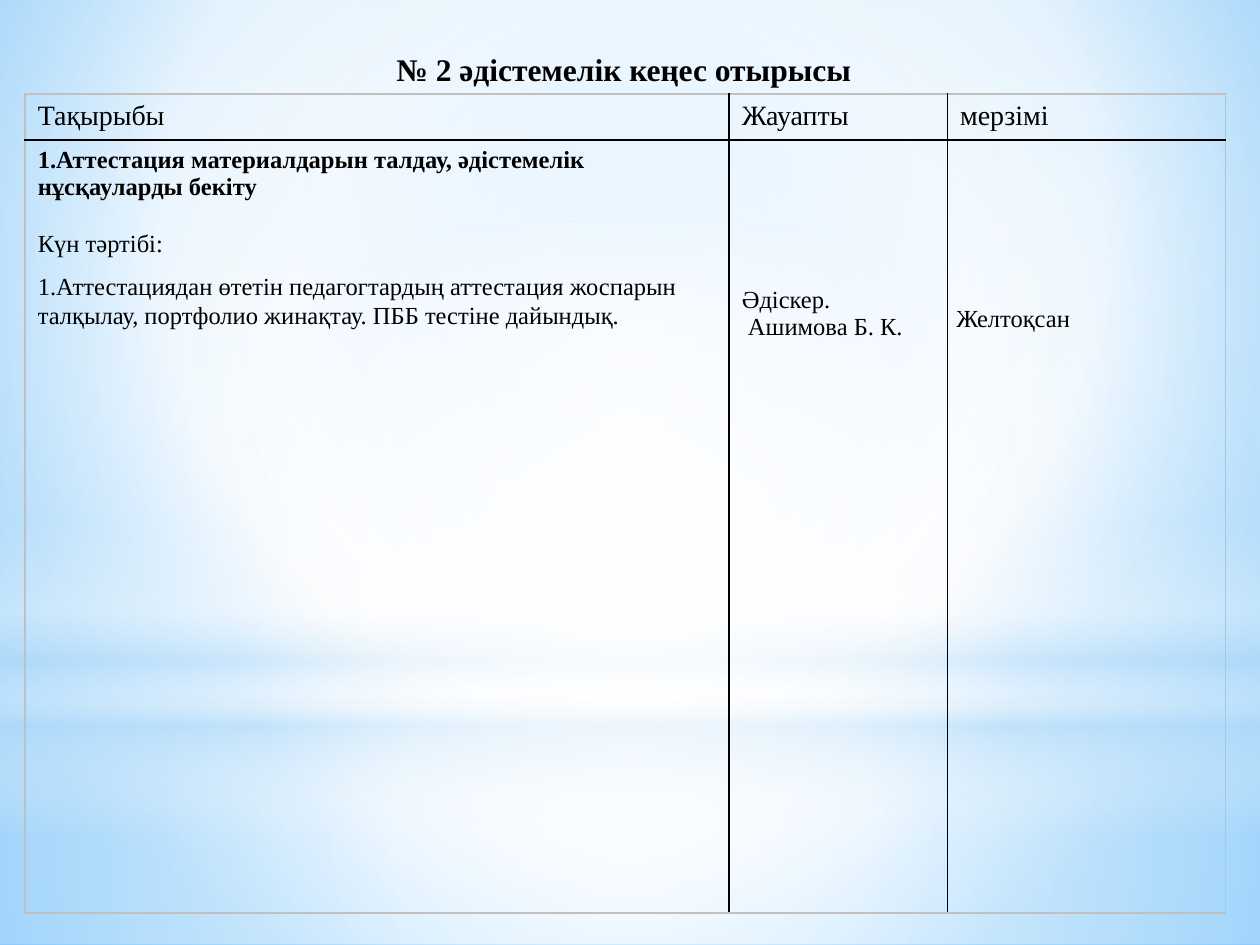
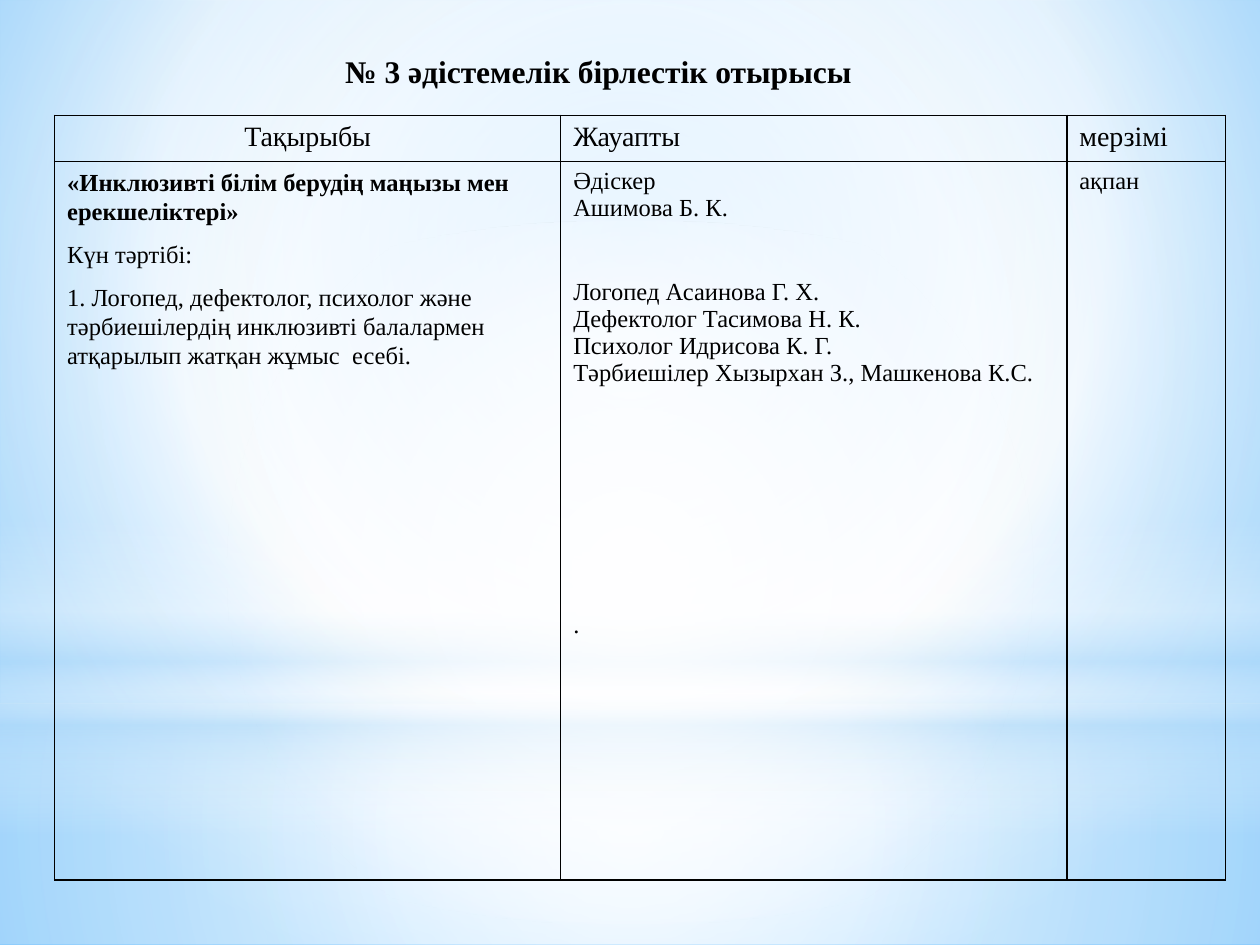
from lxml.etree import SubElement
from pptx import Presentation
from pptx.dml.color import RGBColor
from pptx.enum.shapes import MSO_SHAPE
from pptx.enum.text import MSO_ANCHOR, MSO_AUTO_SIZE, PP_ALIGN
from pptx.oxml.ns import qn
from pptx.util import Pt

COLORS = {
    "text": "000000",
    "grid": "000000",
    "pale_grid": "C0C0C0",
    "white": "FFFFFF",
    "mist": "B4DCFA",
    "sky": "9ED5FF",
    "azure": "5BB9FF",
}
FONT = "Times New Roman"
TITLE_SIZE, HEADER_SIZE, BODY_SIZE = 18, 16, 14
HEADER_HEIGHT = 26.3
BODY_LINE = 16.1
HEADERS = ["Тақырыбы", "Жауапты", "мерзімі"]
LOOSE = {"line_spacing": 1.07, "space_after": 8}
CENTER = (50, 50, 50, 50)

BACKDROP = [
    (MSO_SHAPE.RECTANGLE, (0, 402, 720, 138), CENTER,
     [(0, "white", 91), (37, "white", 76), (100, "mist", 79)]),
    (MSO_SHAPE.RECTANGLE, (0, 0, 720, 402), CENTER,
     [(0, "white", 89), (48, "white", 62), (100, "mist", 79)]),
    (MSO_SHAPE.RECTANGLE, (0, 297, 720, 180), None,
     [(0, "white", 0), (29, "white", 30), (45, "mist", 40),
      (55, "white", 26), (65, "mist", 60), (100, "white", 0)]),
    (MSO_SHAPE.OVAL, (0, 126, 720, 402), CENTER,
     [(0, "white", 100), (56, "white", 0)]),
]


def write_text(frame, text, size=BODY_SIZE, bold=False, align=PP_ALIGN.LEFT,
               line_spacing=1.0, space_before=0, space_after=0):
    paragraph = frame.paragraphs[0]
    if paragraph.runs:
        paragraph = frame.add_paragraph()
    paragraph.alignment = align
    paragraph.line_spacing = line_spacing
    paragraph.space_before = Pt(space_before)
    paragraph.space_after = Pt(space_after)
    run = paragraph.add_run()
    run.text = text
    run.font.name = FONT
    run.font.size = Pt(size)
    run.font.bold = bold
    run.font.color.rgb = RGBColor.from_string(COLORS["text"])


def set_gradient(fill, properties, stops, focus):
    fill.solid()
    solid = properties.find(qn("a:solidFill"))
    gradient = properties.makeelement(qn("a:gradFill"), {"rotWithShape": "1"})
    properties.replace(solid, gradient)
    stop_list = SubElement(gradient, qn("a:gsLst"))
    for position, color, opacity in stops:
        stop = SubElement(stop_list, qn("a:gs"), pos=str(position * 1000))
        value = SubElement(stop, qn("a:srgbClr"), val=COLORS[color])
        if opacity < 100:
            SubElement(value, qn("a:alpha"), val=str(opacity * 1000))
    if focus:
        circle = SubElement(gradient, qn("a:path"), path="circle")
        edges = {side: str(share * 1000) for side, share in zip("ltrb", focus)}
        SubElement(circle, qn("a:fillToRect"), edges)
    else:
        SubElement(gradient, qn("a:lin"), ang="5400000", scaled="0")


def build_backdrop(master, slide):
    fill = master.background.fill
    fill.solid()
    properties = master.element.find(".//" + qn("p:bgPr"))
    set_gradient(fill, properties,
                 [(0, "sky", 100), (60, "white", 100), (100, "azure", 100)],
                 (20, 10, 20, 60))
    for index, (kind, bounds, focus, stops) in enumerate(BACKDROP):
        shape = slide.shapes.add_shape(kind, *map(Pt, bounds))
        shape.shadow.inherit = False
        shape.line.fill.background()
        set_gradient(shape.fill, shape.element.spPr, stops, focus)
        shape.element.nvSpPr.cNvPr.set("id", str(20 + index))
        master.shapes.element.insert(2 + index, shape.element)


def add_title(slide, text, bounds, align):
    title = slide.shapes.title
    title.left, title.top, title.width, title.height = map(Pt, bounds)
    frame = title.text_frame
    frame.auto_size = MSO_AUTO_SIZE.NONE
    frame.word_wrap = True
    frame.vertical_anchor = MSO_ANCHOR.BOTTOM
    write_text(frame, text, size=TITLE_SIZE, bold=True, align=align)


def set_borders(cell, colors):
    properties = cell._tc.get_or_add_tcPr()
    for side, color in zip("LRTB", colors):
        line = SubElement(properties, qn("a:ln" + side), w=str(Pt(1)))
        solid = SubElement(line, qn("a:solidFill"))
        SubElement(solid, qn("a:srgbClr"), val=COLORS[color])


def add_table(slide, left, top, widths, body_height, cells, frame_color="grid"):
    heights = [HEADER_HEIGHT, body_height]
    bounds = (left, top, sum(widths), sum(heights))
    table = slide.shapes.add_table(2, len(widths), *map(Pt, bounds)).table
    table.first_row = table.horz_banding = False
    for column, width in zip(table.columns, widths):
        column.width = Pt(width)
    last_column = len(widths) - 1
    for row, height in enumerate(heights):
        table.rows[row].height = Pt(height)
        for column in range(len(widths)):
            cell = table.cell(row, column)
            on_edge = [column == 0, column == last_column, row == 0, row == 1]
            set_borders(cell, [frame_color if edge else "grid" for edge in on_edge])
            cell.fill.background()
            for text, text_format in cells[row][column]:
                write_text(cell.text_frame, text, **text_format)
    return table


def header_row(first_align=PP_ALIGN.LEFT):
    aligns = [first_align, PP_ALIGN.LEFT, PP_ALIGN.LEFT]
    return [[(text, {"size": HEADER_SIZE, "align": align})]
            for text, align in zip(HEADERS, aligns)]


def build_council_meeting(slide):
    add_title(slide, "№ 2 әдістемелік кеңес отырысы", (198, 3, 317, 51), PP_ALIGN.CENTER)
    topics = [
        ("1.Аттестация материалдарын талдау, әдістемелік  нұсқауларды бекіту", {"bold": True}),
        ("Күн тәртібі:", {**LOOSE, "space_before": BODY_LINE}),
        ("1.Аттестациядан өтетін педагогтардың аттестация жоспарын талқылау, "
         "портфолио жинақтау. ПББ тестіне дайындық.", LOOSE),
    ]
    people = [("Әдіскер.", {}), (" Ашимова Б. К.", {})]
    month = [("Желтоқсан", {"line_spacing": 1.15})]
    table = add_table(slide, 14.4, 53.7, [402.3, 124.8, 158.7], 441.7,
                      [header_row(), [topics, people, month]], "pale_grid")
    table.cell(1, 1).margin_top = Pt(3.6 + 5 * BODY_LINE)
    month_cell = table.cell(1, 2)
    month_cell.margin_left = month_cell.margin_right = Pt(5)
    month_cell.margin_top = Pt(5 * 1.15 * BODY_LINE)


def build_association_meeting(slide):
    add_title(slide, "№ 3 әдістемелік бірлестік отырысы", (190, 26, 380, 29), PP_ALIGN.LEFT)
    topics = [
        ("«Инклюзивті білім берудің маңызы мен ерекшеліктері»", {**LOOSE, "bold": True}),
        ("Күн тәртібі:", LOOSE),
        ("1. Логопед, дефектолог, психолог және тәрбиешілердің инклюзивті "
         "балалармен атқарылып жатқан жұмыс  есебі.", LOOSE),
    ]
    people = [
        ("Әдіскер", {}),
        ("Ашимова Б. К.", {}),
        ("Логопед Асаинова Г. Х.", {"space_before": 2 * BODY_LINE}),
        ("Дефектолог Тасимова Н. К.", {}),
        ("Психолог Идрисова К. Г.", {}),
        ("Тәрбиешілер Хызырхан З., Машкенова К.С.", {}),
        (".", {"space_before": 8 * BODY_LINE}),
    ]
    add_table(slide, 31.2, 66, [289.2, 289.2, 90.6], 410.5,
              [header_row(PP_ALIGN.CENTER), [topics, people, [("ақпан", {})]]])


def main():
    presentation = Presentation()
    presentation.slide_width, presentation.slide_height = Pt(720), Pt(540)
    layout = presentation.slide_layouts[5]
    council, association = [presentation.slides.add_slide(layout) for _ in range(2)]
    build_backdrop(presentation.slide_master, council)
    build_council_meeting(council)
    build_association_meeting(association)
    presentation.save("out.pptx")


if __name__ == "__main__":
    main()
